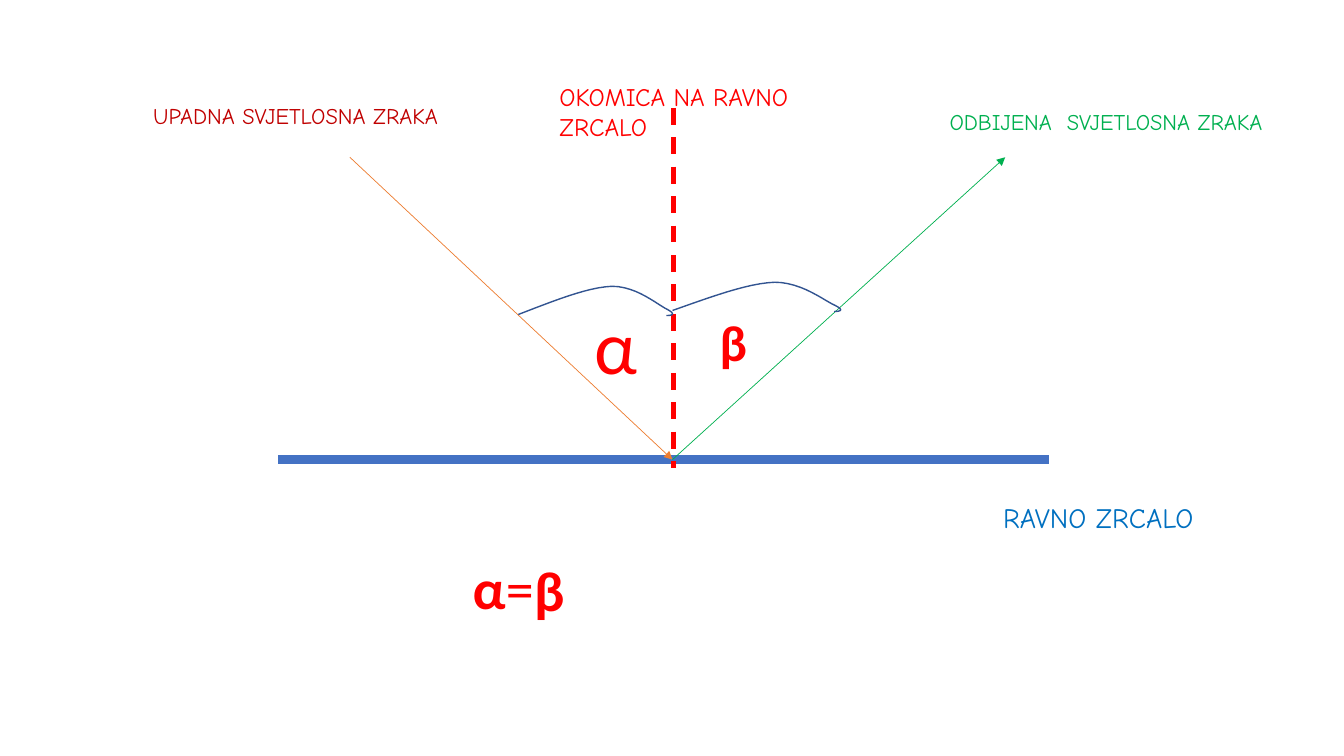
from dataclasses import dataclass

from lxml import etree
from pptx import Presentation
from pptx import util as u
from pptx.dml.color import RGBColor
from pptx.enum import dml, text
from pptx.enum import shapes
from pptx.oxml.ns import qn


@dataclass(frozen=True)
class Theme:
    label_font: str = "Comic Neue"
    math_font: str = "Calibri"
    red: str = "FF0000"
    dark_red: str = "C00000"
    green: str = "00B050"
    orange: str = "ED7D31"
    mirror: str = "4472C4"
    blue: str = "0070C0"
    arc: str = "325491"
    small: int = 16
    medium: int = 18
    large: int = 20
    beta: int = 36
    equation: int = 40
    alpha: int = 54


# Angle mark as three cubic curves: start point, then three points per curve
ANGLE_MARK = [(0, 0),
              (0.34, -0.13), (0.68, -0.27), (0.93, -0.28),
              (1.18, -0.28), (1.39, -0.09), (1.48, -0.05),
              (1.57, 0), (1.52, 0.01), (1.47, 0.01)]
CURVE_STEPS = 12


def curve_points(points):
    """Return points along a chain of cubic Bezier curves."""
    result = [points[0]]
    for i in range(0, len(points) - 1, 3):
        for step in range(1, CURVE_STEPS + 1):
            t = step / CURVE_STEPS
            weights = ((1 - t) ** 3, 3 * t * (1 - t) ** 2,
                       3 * t ** 2 * (1 - t), t ** 3)
            result.append(tuple(
                sum(w * pt[axis] for w, pt in zip(weights, points[i:i + 4]))
                for axis in (0, 1)))
    return result


class Diagram:
    def __init__(self, s, theme):
        self.s = s
        self.theme = theme

    def stroke(self, sp, color, width):
        sp.line.color.rgb = RGBColor.from_string(color)
        sp.line.width = u.Pt(width)

    def line(self, start, end, color, width, dashed=False, arrow=False):
        sp = self.s.shapes.add_connector(
            shapes.MSO_CONNECTOR.STRAIGHT,
            *(u.Inches(v) for v in (*start, *end)))
        self.stroke(sp, color, width)
        if dashed:
            sp.line.dash_style = dml.MSO_LINE.DASH
        if arrow:
            etree.SubElement(sp.line._get_or_add_ln(), qn("a:tailEnd"),
                             type="triangle")
        etree.SubElement(sp._element.spPr, qn("a:effectLst"))

    def angle_mark(self, x, y, stretch=1.0):
        pts = [(u.Inches(x + dx * stretch), u.Inches(y + dy))
               for dx, dy in curve_points(ANGLE_MARK)]
        builder = self.s.shapes.build_freeform(*pts[0])
        builder.add_line_segments(pts[1:], close=False)
        sp = builder.convert_to_shape()
        sp.shadow.inherit = False
        sp.fill.background()
        self.stroke(sp, self.theme.arc, 1)

    def label(self, box, runs, color, size, font, wrap=False):
        """Add a text box; runs is a list of (words, bold)."""
        sp = self.s.shapes.add_textbox(*(u.Inches(v) for v in box))
        tf = sp.text_frame
        tf.word_wrap = wrap
        tf.auto_size = text.MSO_AUTO_SIZE.SHAPE_TO_FIT_TEXT
        p = tf.paragraphs[0]
        for words, bold in runs:
            r = p.add_run()
            r.text = words
            style = {"name": font, "size": u.Pt(size), "bold": bold}
            for name, value in style.items():
                setattr(r.font, name, value)
            r.font.color.rgb = RGBColor.from_string(color)


def main():
    prs = Presentation()
    prs.slide_width, prs.slide_height = u.Inches(13.33), u.Inches(7.5)
    t = Theme()
    d = Diagram(prs.slides.add_slide(prs.slide_layouts[6]), t)
    hit = (6.67, 4.56)

    # Mirror, normal and rays
    d.line((2.76, hit[1]), (10.4, hit[1]), t.mirror, 6)
    d.line((6.68, 1.07), (6.68, 4.64), t.red, 3, dashed=True)
    d.line((3.47, 1.56), hit, t.orange, 0.5, arrow=True)
    d.line(hit, (9.97, 1.56), t.green, 0.5, arrow=True)

    # Names of the parts
    for box, words, color, size, wrap in (
            ((9.85, 4.92, 2.45, 0.44), "RAVNO ZRCALO", t.blue, t.large, False),
            ((1.42, 0.96, 3.48, 0.37), "UPADNA SVJETLOSNA ZRAKA",
             t.dark_red, t.small, False),
            ((5.45, 0.76, 2.57, 0.4), "OKOMICA NA RAVNO ZRCALO",
             t.red, t.medium, True),
            ((9.32, 1.02, 3.66, 0.37), "ODBIJENA  SVJETLOSNA ZRAKA",
             t.green, t.small, False)):
        d.label(box, [(words, False)], color, size, t.label_font, wrap)

    # Angle marks
    d.angle_mark(5.14, 3.12)
    d.angle_mark(6.67, 3.08, stretch=1.09)

    # Angle symbols and the law of reflection
    for box, runs, size, wrap in (
            ((5.8, 2.92, 0.59, 1.01), [("α", False)], t.alpha, True),
            ((7.04, 3.04, 0.36, 0.71), [("β", True)], t.beta, True),
            ((4.59, 5.44, 1.37, 0.77), [("α", True), ("=", False)],
             t.equation, True),
            ((5.2, 5.46, 0.51, 0.77), [("β", True)], t.equation, False)):
        d.label(box, runs, t.red, size, t.math_font, wrap)

    prs.save("out.pptx")


if __name__ == "__main__":
    main()
